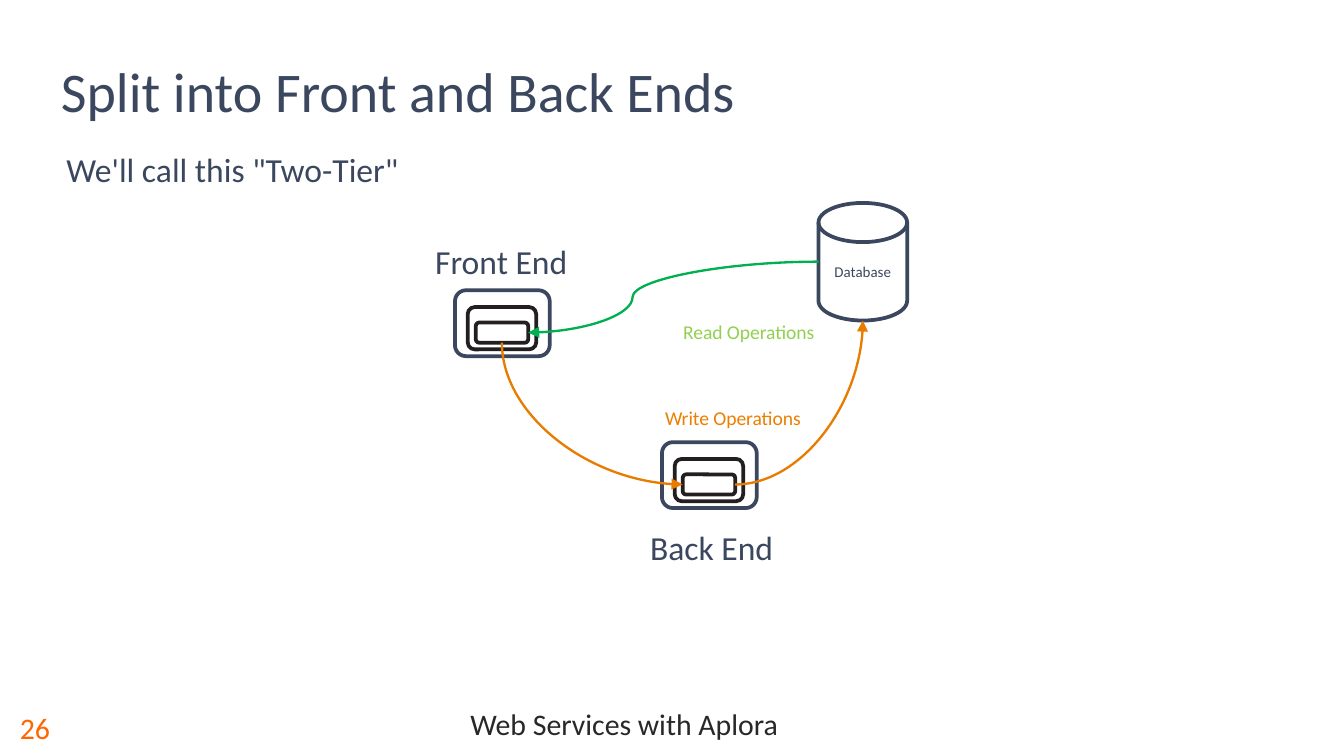
from lxml.etree import SubElement
from pptx import Presentation
from pptx.dml.color import RGBColor
from pptx.enum.shapes import MSO_CONNECTOR, MSO_SHAPE
from pptx.enum.text import MSO_ANCHOR, PP_ALIGN
from pptx.oxml.ns import qn
from pptx.util import Inches, Pt

COLUMNS, ROWS = 100, 56.25
CELL = Inches(0.1)
FONT = "Calibri"
COLORS = {
    "slate": "3B475E", "ink": "231F20", "footer": "282828", "page": "FF6600",
    "white": "FFFFFF", "read": "00B050", "write": "E87C00",
    "read label": "92D050", "write label": "ED7F00",
}
LEFT, CENTER = PP_ALIGN.LEFT, PP_ALIGN.CENTER
TOP, MIDDLE = MSO_ANCHOR.TOP, MSO_ANCHOR.MIDDLE

FOOTER = ("Web Services with Aplora", (7.8, 51.9, 77.3, 4.4), 16, "footer", CENTER, MIDDLE, True)
LABELS = [
    ("26", (0.5, 51.9, 7.3, 4.4), 16, "page", LEFT, MIDDLE, True),
    ("Split into Front and Back Ends", (3.55, 2.95, 76.6, 7.5), 30, "slate", LEFT, MIDDLE, True),
    ("We'll call this \"Two-Tier\"", (3.95, 10.6, 43.5, 4), 18, "slate", LEFT, TOP, True),
    ("Front End", (30.6, 17.4, 13.4, 4), 18, "slate", CENTER, TOP, True),
    ("Back End", (46.25, 38.7, 13.4, 4), 18, "slate", CENTER, TOP, True),
    ("Read Operations", (49.85, 23.3, 12.6, 2.8), 10.5, "read label", LEFT, TOP, False),
    ("Write Operations", (48.5, 29.7, 13.3, 2.9), 10.5, "write label", LEFT, TOP, False),
]
DATABASE = ("Database", (60.9, 15.1, 6.6, 8.75))
TIERS = {"front": (33.85, 21.6), "back": (49.25, 32.9)}
NESTED_BOXES = [
    ((0, 0, 7.05, 4.9), "slate"),
    ((0.95, 1.25, 5.1, 3.15), "ink"),
    ((1.55, 2.4, 3.9, 1.5), "ink"),
]


def cells(values):
    return [round(value * CELL) for value in values]


def color(name):
    return RGBColor.from_string(COLORS[name])


def write(frame, text, size, ink, align, anchor):
    frame.text = text
    frame.vertical_anchor = anchor
    paragraph = frame.paragraphs[0]
    paragraph.alignment = align
    font = paragraph.runs[0].font
    font.name, font.size = FONT, Pt(size)
    font.color.rgb = color(ink)
    return paragraph


def add_label(shapes, text, area, size, ink, align, anchor, wrap):
    frame = shapes.add_textbox(*cells(area)).text_frame
    frame.word_wrap = wrap
    return write(frame, text, size, ink, align, anchor)


def outlined(shapes, preset, area, line):
    shape = shapes.add_shape(preset, *cells(area))
    shape.shadow.inherit = False
    shape.fill.solid()
    shape.fill.fore_color.rgb = color("white")
    shape.line.color.rgb = color(line)
    shape.line.width = Pt(2)
    return shape


def sides(area):
    left, top, width, height = area
    return {
        "left": (left, top + height / 2),
        "right": (left + width, top + height / 2),
        "bottom": (left + width / 2, top + height),
    }


def tier(shapes, origin):
    group = shapes.add_group_shape()
    for (dx, dy, width, height), line in NESTED_BOXES:
        area = (origin[0] + dx, origin[1] + dy, width, height)
        outlined(group.shapes, MSO_SHAPE.ROUNDED_RECTANGLE, area, line)
    return sides(area)


def flow(shapes, start, end, line, arrow, preset, bend=None):
    curve = shapes.add_connector(MSO_CONNECTOR.CURVE, *cells(start + end))
    curve.line.color.rgb = color(line)
    curve.line.width = Pt(1.25)
    properties = curve._element.spPr
    geometry = properties.find(qn("a:prstGeom"))
    geometry.set("prst", preset)
    if bend is not None:
        SubElement(geometry.find(qn("a:avLst")), qn("a:gd"),
                   name="adj1", fmla=f"val {round(bend * 100000)}")
    SubElement(properties.find(qn("a:ln")), qn(f"a:{arrow}"), type="triangle")
    SubElement(properties, qn("a:effectLst"))


presentation = Presentation()
presentation.slide_width, presentation.slide_height = cells((COLUMNS, ROWS))
slide = presentation.slides.add_slide(presentation.slide_layouts[6])
shapes = slide.shapes

add_label(shapes, *FOOTER).line_spacing = 0.8

name, database_area = DATABASE
disk = outlined(shapes, MSO_SHAPE.FLOWCHART_MAGNETIC_DISK, database_area, "slate")
write(disk.text_frame, name, 8, "slate", CENTER, MIDDLE)
database = sides(database_area)
front, back = (tier(shapes, TIERS[end]) for end in ("front", "back"))

flow(shapes, front["right"], database["left"], "read", "headEnd", "curvedConnector3", 0.36)
flow(shapes, back["right"], database["bottom"], "write", "tailEnd", "curvedConnector2")
flow(shapes, back["left"], front["bottom"], "write", "headEnd", "curvedConnector2")

for label in LABELS:
    add_label(shapes, *label)

presentation.save("out.pptx")
